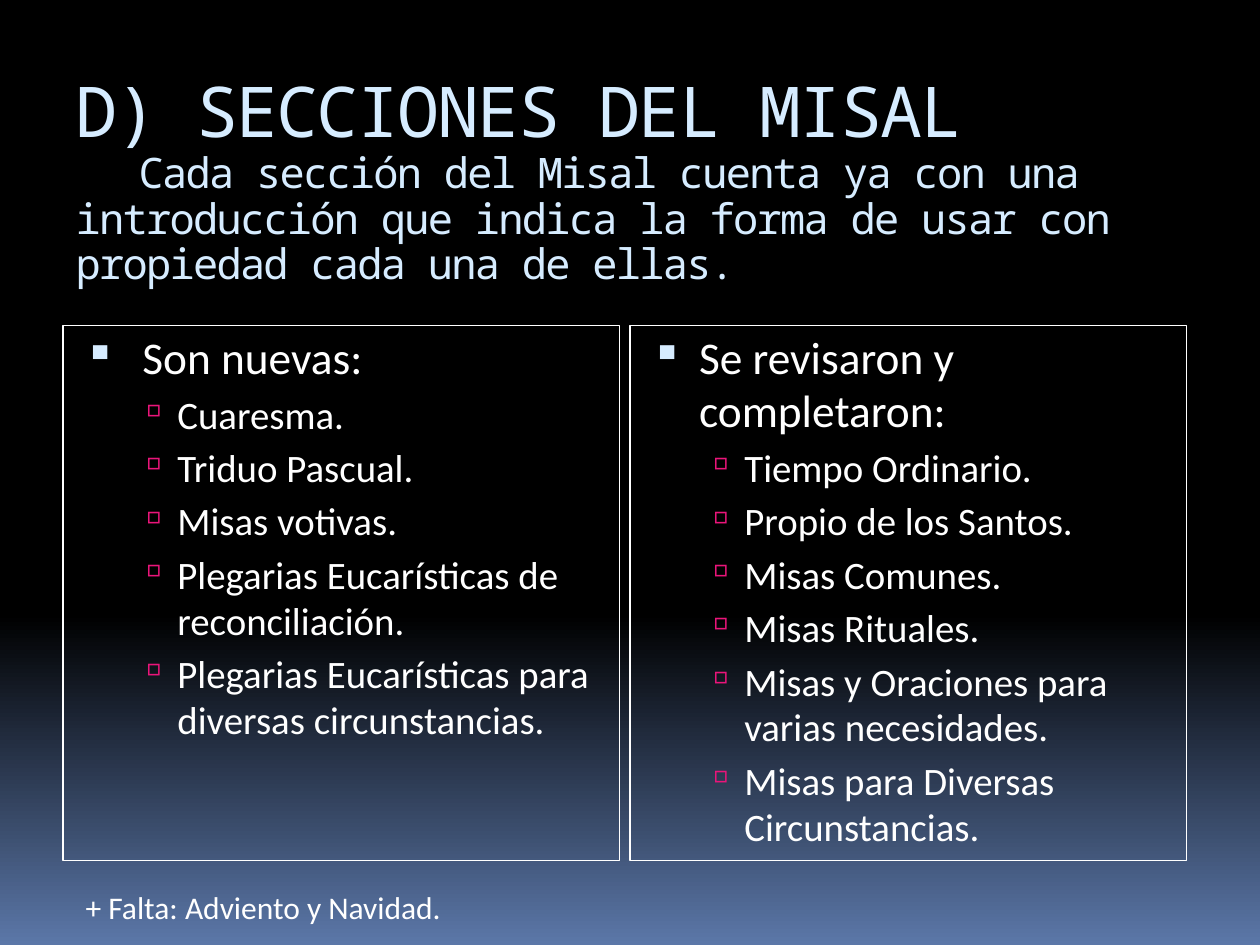
from pptx import Presentation as Deck
from pptx.dml.color import RGBColor as RGB
from pptx.enum.shapes import MSO_SHAPE as Kind
from pptx.enum.text import MSO_ANCHOR as Anchor, MSO_AUTO_SIZE as Fit, PP_ALIGN as Align
from pptx.oxml.ns import qn
from pptx.util import Pt
from lxml.etree import SubElement as Sub

BLACK = RGB(0x00, 0x00, 0x00)
BLUE = RGB(0x5B, 0x77, 0xA8)
ICE = RGB(0xD6, 0xEC, 0xFF)
PINK = RGB(0xEA, 0x15, 0x7A)
WHITE = RGB(0xFF, 0xFF, 0xFF)

HEAD = "D) SECCIONES DEL MISAL"
INTRO = ("\tCada sección del Misal cuenta ya con una introducción que indica "
         "la forma de usar con propiedad cada una de ellas.")
LISTS = [
    (" Son nuevas:", [
        "Cuaresma.", "Triduo Pascual.", "Misas votivas.",
        "Plegarias Eucarísticas de reconciliación.",
        "Plegarias Eucarísticas para diversas circunstancias."]),
    ("Se revisaron y completaron:", [
        "Tiempo Ordinario.", "Propio de los Santos.", "Misas Comunes.",
        "Misas Rituales.", "Misas y Oraciones para varias necesidades.",
        "Misas para Diversas Circunstancias."]),
]
NOTE = "+ Falta: Adviento y Navidad."

LEVELS = [
    dict(size=25.9, left=32.4, hang=-27.4, gap=7, mark="▪", tint=ICE, scale=95),
    dict(size=22.2, left=58.3, hang=-22.3, gap=4.44, mark="▫", tint=PINK, scale=90),
]


def put(item, **vals):
    for name, val in vals.items():
        setattr(item, name, val)


class Page:
    text = dict(name="Calibri", bold=False)
    title = dict(name="Noto Sans Mono", bold=False)

    def __init__(self, deck):
        self.slide = deck.slides.add_slide(deck.slide_layouts[5])

    def ground(self, angle, stops):
        fill = self.slide.background.fill
        fill.gradient()
        fill.gradient_angle = angle
        for stop, (place, color) in zip(fill.gradient_stops, stops):
            stop.position = place
            stop.color.rgb = color

    def run(self, para, words, size, color, font):
        run = para.add_run()
        run.text = words
        put(run.font, size=Pt(size), **font)
        run.font.color.rgb = color
        return run

    def heading(self, box, lines):
        shape = self.slide.shapes.title
        put(shape, **dict(zip(("left", "top", "width", "height"), map(Pt, box))))
        frame = shape.text_frame
        put(frame, word_wrap=True, auto_size=Fit.NONE, vertical_anchor=Anchor.TOP)
        para = frame.paragraphs[0]
        put(para, alignment=Align.LEFT, line_spacing=0.9, space_before=Pt(0))
        for count, (words, size) in enumerate(lines):
            if count:
                para.add_line_break()
            run = self.run(para, words, size, ICE, self.title)
            run.font._element.set("spc", "-100")

    def bullet(self, para, words, level):
        look = LEVELS[level]
        put(para, level=level, alignment=Align.LEFT, line_spacing=0.98,
            space_before=Pt(look["gap"]))
        props = para._p.get_or_add_pPr()
        props.set("marL", str(Pt(look["left"])))
        props.set("indent", str(Pt(look["hang"])))
        tint = Sub(props, qn("a:buClr"))
        Sub(tint, qn("a:srgbClr"), val=str(look["tint"]))
        Sub(props, qn("a:buSzPct"), val=str(look["scale"] * 1000))
        Sub(props, qn("a:buChar"), char=look["mark"])
        self.run(para, words, look["size"], WHITE, self.text)

    def panel(self, box, head, items):
        shape = self.slide.shapes.add_shape(Kind.RECTANGLE, *map(Pt, box))
        shape.shadow.inherit = False
        shape.fill.background()
        shape.line.color.rgb = WHITE
        shape.line.width = Pt(0.75)
        frame = shape.text_frame
        put(frame, word_wrap=True, vertical_anchor=Anchor.TOP)
        self.bullet(frame.paragraphs[0], head, 0)
        for item in items:
            self.bullet(frame.add_paragraph(), item, 1)

    def note(self, box, words, size):
        frame = self.slide.shapes.add_textbox(*map(Pt, box)).text_frame
        put(frame, word_wrap=True, auto_size=Fit.SHAPE_TO_FIT_TEXT)
        self.run(frame.paragraphs[0], words, size, WHITE, self.text)


def main():
    deck = Deck()
    put(deck, slide_width=Pt(720), slide_height=Pt(540))
    page = Page(deck)
    page.ground(270, [(0.65, BLACK), (1, BLUE)])
    page.heading((36, 40.3, 648, 139.7), [(HEAD, 40), (INTRO, 24)])
    for col, (head, items) in enumerate(LISTS):
        page.panel((36 + 324 * col, 185.8, 318, 306), head, items)
    page.note((41.8, 504, 648, 28.8), NOTE, 18)
    deck.save("out.pptx")


if __name__ == "__main__":
    main()
